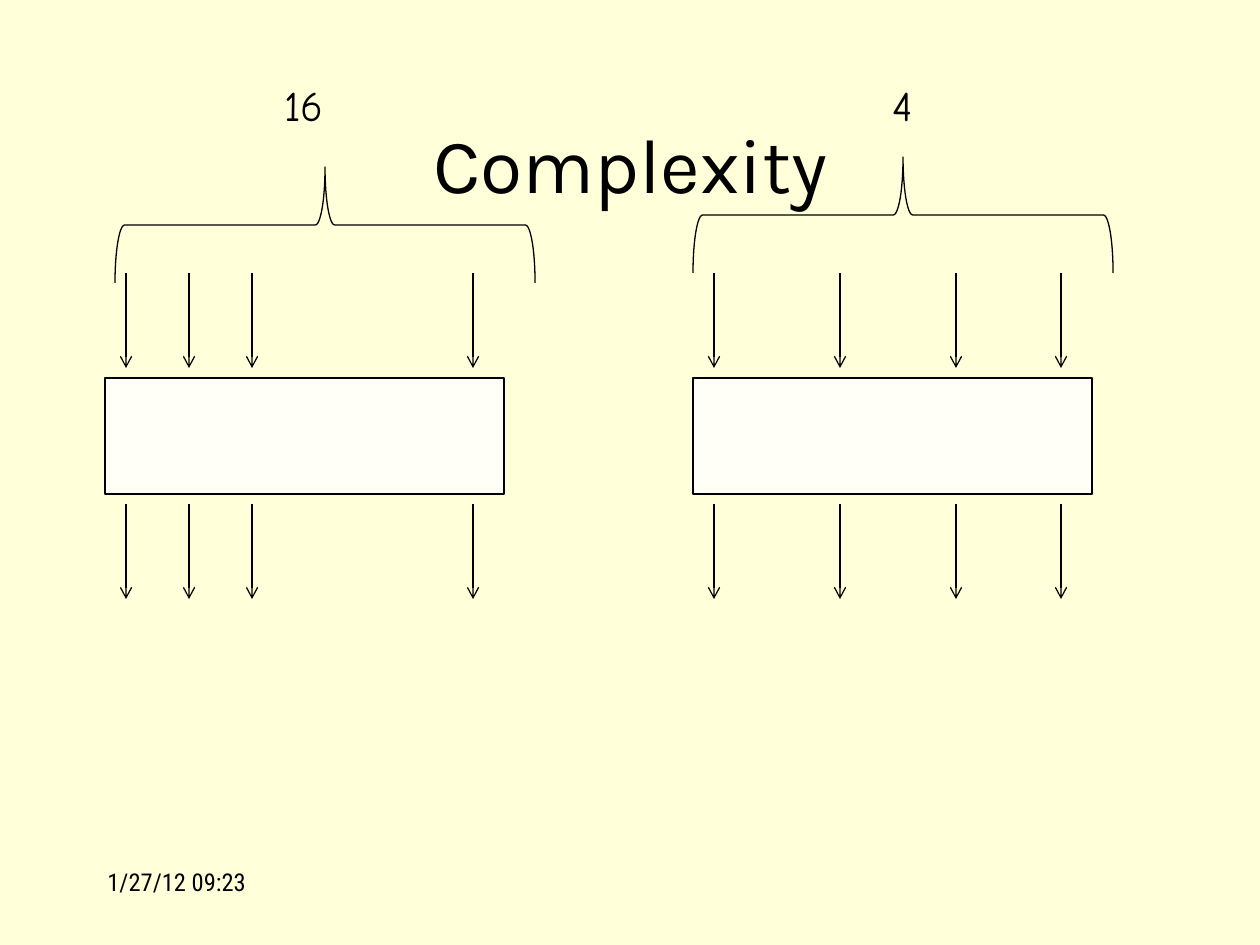
from lxml.etree import SubElement
from pptx import Presentation
from pptx.dml.color import RGBColor
from pptx.enum.shapes import MSO_CONNECTOR, MSO_SHAPE
from pptx.enum.text import MSO_ANCHOR, PP_ALIGN
from pptx.oxml.ns import qn
from pptx.util import Emu, Pt

PX_PER_INCH = 126
INK = "000000"
PAPER = "FFFFD9"
BOX_FILL = "FFFFF7"
BOX_TOP, BOX_WIDTH, BOX_HEIGHT = 378, 399, 116
ARROW_LENGTH = 95
ARROW_TOPS = (273, 504)
BRACE_SPAN, BRACE_DEPTH = 420, 116


def px(length):
    """Turn whole pixels into EMU."""
    return Emu(round(length * 914400 / PX_PER_INCH))


def color(hex_code):
    """Turn a hex string into a colour."""
    return RGBColor.from_string(hex_code)


def ink_line(shape):
    """Give a shape or connector the thin black line."""
    shape.line.color.rgb = color(INK)
    shape.line.width = Pt(0.75)


def add_text(slide, text, box, font_name, size, align=PP_ALIGN.LEFT, anchor=MSO_ANCHOR.TOP):
    """Add one line of text in a box of left, top, width and height."""
    frame = slide.shapes.add_textbox(*map(px, box)).text_frame
    frame.word_wrap = True
    frame.vertical_anchor = anchor
    paragraph = frame.paragraphs[0]
    paragraph.text = text
    paragraph.alignment = align
    paragraph.font.name = font_name
    paragraph.font.size = Pt(size)
    paragraph.font.color.rgb = color(INK)


def add_box(slide, left):
    """Add the block that the inputs enter and the outputs leave."""
    block = slide.shapes.add_shape(
        MSO_SHAPE.RECTANGLE, px(left), px(BOX_TOP), px(BOX_WIDTH), px(BOX_HEIGHT))
    block.shadow.inherit = False
    block.fill.solid()
    block.fill.fore_color.rgb = color(BOX_FILL)
    ink_line(block)


def add_arrow(slide, x, top):
    """Add a downward arrow with an open head."""
    arrow = slide.shapes.add_connector(
        MSO_CONNECTOR.STRAIGHT, px(x), px(top), px(x), px(top + ARROW_LENGTH))
    ink_line(arrow)
    SubElement(arrow.line._get_or_add_ln(), qn("a:tailEnd"), type="arrow")
    SubElement(arrow._element.spPr, qn("a:effectLst"))


def add_brace(slide, center_x, center_y):
    """Add a brace pointing up, centred on a point."""
    brace = slide.shapes.add_shape(
        MSO_SHAPE.LEFT_BRACE, px(center_x - BRACE_DEPTH // 2),
        px(center_y - BRACE_SPAN // 2), px(BRACE_DEPTH), px(BRACE_SPAN))
    brace.rotation = 90
    brace.shadow.inherit = False
    brace.fill.background()
    ink_line(brace)


def add_network(slide, count, count_left, box_left, arrow_xs, brace_center):
    """Add a block with its arrows, brace and input count."""
    add_box(slide, box_left)
    for top in ARROW_TOPS:
        for x in arrow_xs:
            add_arrow(slide, x, top)
    add_brace(slide, *brace_center)
    add_text(slide, count, (count_left, 73, 168, 63), "Comic Neue", 24, PP_ALIGN.CENTER)


def main():
    """Build and save the slide."""
    deck = Presentation()
    deck.slide_width, deck.slide_height = px(1260), px(945)
    slide = deck.slides.add_slide(deck.slide_layouts[6])
    slide.background.fill.solid()
    slide.background.fill.fore_color.rgb = color(PAPER)

    add_text(slide, "Complexity", (95, 84, 1071, 158), "Karla", 44,
             PP_ALIGN.CENTER, MSO_ANCHOR.MIDDLE)
    add_text(slide, "1/27/12 09:23", (95, 861, 262, 63), "Roboto Condensed", 14)
    add_network(slide, "16", 220, 105, (126, 189, 252, 473), (325, 225))
    add_network(slide, "4", 819, 693, (714, 840, 956, 1061), (903, 215))
    deck.save("out.pptx")


if __name__ == "__main__":
    main()
